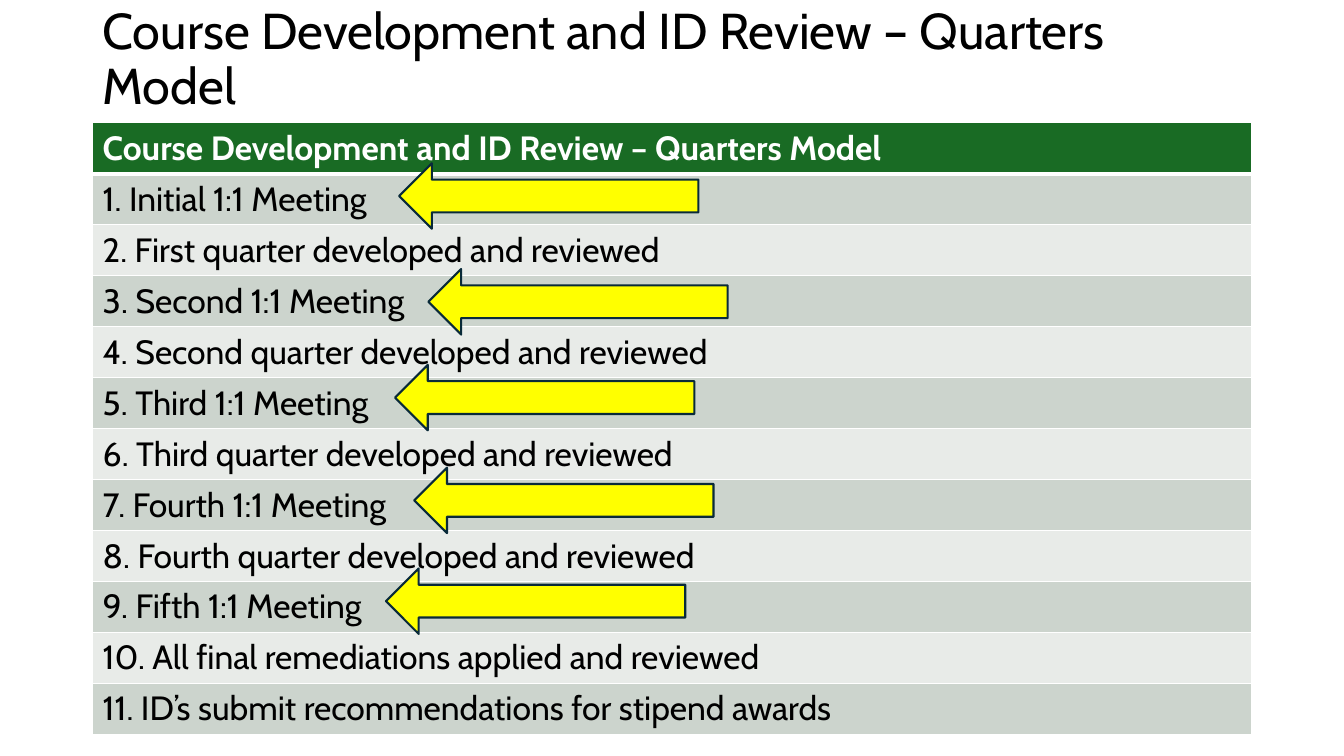
from dataclasses import dataclass

from lxml.etree import SubElement
from pptx import Presentation
from pptx.dml.color import RGBColor
from pptx.enum.shapes import MSO_SHAPE as Shape
from pptx.enum.text import MSO_ANCHOR as Anchor
from pptx.oxml.ns import qn
from pptx.util import Pt


@dataclass(frozen=True)
class Theme:
    """Colours, font and type sizes of the slide."""
    font: str = "Cabin"
    title_size: int = 36
    table_size: int = 24
    ink: str = "000000"
    white: str = "FFFFFF"
    header: str = "196B24"
    bands: tuple = ("CCD4CD", "E8EBE8")
    arrow: str = "FFFF00"
    arrow_line: str = "092A39"


THEME = Theme()
HEADING = "Course Development and ID Review – Quarters Model"
STEPS = [
    "Initial 1:1 Meeting",
    "First quarter developed and reviewed",
    "Second 1:1 Meeting",
    "Second quarter developed and reviewed",
    "Third 1:1 Meeting",
    "Third quarter developed and reviewed",
    "Fourth 1:1 Meeting",
    "Fourth quarter developed and reviewed",
    "Fifth 1:1 Meeting",
    "All final remediations applied and reviewed",
    "ID’s submit recommendations for stipend awards",
]
ROW_HEIGHT = 36.4
ARROW_SIZE = (213.8, 46.8)
MEETING_ARROWS = [(218.9, 28.8), (239.8, 104.4), (216, 172.8), (229.7, 246.2), (209.5, 318.2)]


def add_span(para, text, size, color, bold=False):
    """Add one styled run to a paragraph."""
    span = para.add_run()
    span.text = text
    span.font.name = THEME.font
    span.font.size = Pt(size)
    span.font.bold = bold
    span.font.color.rgb = RGBColor.from_string(color)


def paint(fill, color):
    """Give a fill one solid colour."""
    fill.solid()
    fill.fore_color.rgb = RGBColor.from_string(color)


def add_borders(cell, top, bottom):
    """Draw white cell borders, with the given top and bottom widths."""
    properties = cell._tc.get_or_add_tcPr()
    for side, width in (("L", 1), ("R", 1), ("T", top), ("B", bottom)):
        line = SubElement(properties, qn(f"a:ln{side}"), w=str(Pt(width)))
        SubElement(SubElement(line, qn("a:solidFill")), qn("a:srgbClr"), val=THEME.white)


def add_title(page, left, top, width, height):
    """Place the slide title, centred vertically in its box."""
    box = page.shapes.add_textbox(Pt(left), Pt(top), Pt(width), Pt(height))
    frame = box.text_frame
    frame.word_wrap = True
    frame.vertical_anchor = Anchor.MIDDLE
    para = frame.paragraphs[0]
    para.line_spacing = 0.9
    add_span(para, HEADING, THEME.title_size, THEME.ink)


def add_steps(page, left, top, width):
    """Place the table of numbered steps under its green header."""
    count = len(STEPS) + 1
    table = page.shapes.add_table(
        count, 1, Pt(left), Pt(top), Pt(width), Pt(ROW_HEIGHT * count)).table
    lines = [HEADING] + [f"{number}. {step}" for number, step in enumerate(STEPS, 1)]
    for index, text in enumerate(lines):
        table.rows[index].height = Pt(ROW_HEIGHT)
        cell = table.cell(index, 0)
        is_header = index == 0
        add_borders(cell, 3 if index == 1 else 1, 3 if is_header else 1)
        paint(cell.fill, THEME.header if is_header else THEME.bands[(index - 1) % 2])
        add_span(cell.text_frame.paragraphs[0], text, THEME.table_size,
                 THEME.white if is_header else THEME.ink, is_header)


def add_arrows(page, left, top):
    """Point a yellow arrow at each meeting, offset from the table corner."""
    width, height = ARROW_SIZE
    for across, down in MEETING_ARROWS:
        arrow = page.shapes.add_shape(
            Shape.LEFT_ARROW, Pt(left + across), Pt(top + down), Pt(width), Pt(height))
        arrow.shadow.inherit = False
        paint(arrow.fill, THEME.arrow)
        paint(arrow.line.fill, THEME.arrow_line)
        arrow.line.width = Pt(1.5)


def main():
    """Build and save the slide."""
    deck = Presentation()
    deck.slide_width, deck.slide_height = Pt(960), Pt(540)
    page = deck.slides.add_slide(deck.slide_layouts[6])
    left, width, table_top = 66.2, 828, 87.8
    add_title(page, left, 10.1, width, 66.2)
    add_steps(page, left, table_top, width)
    add_arrows(page, left, table_top)
    deck.save("out.pptx")


if __name__ == "__main__":
    main()
